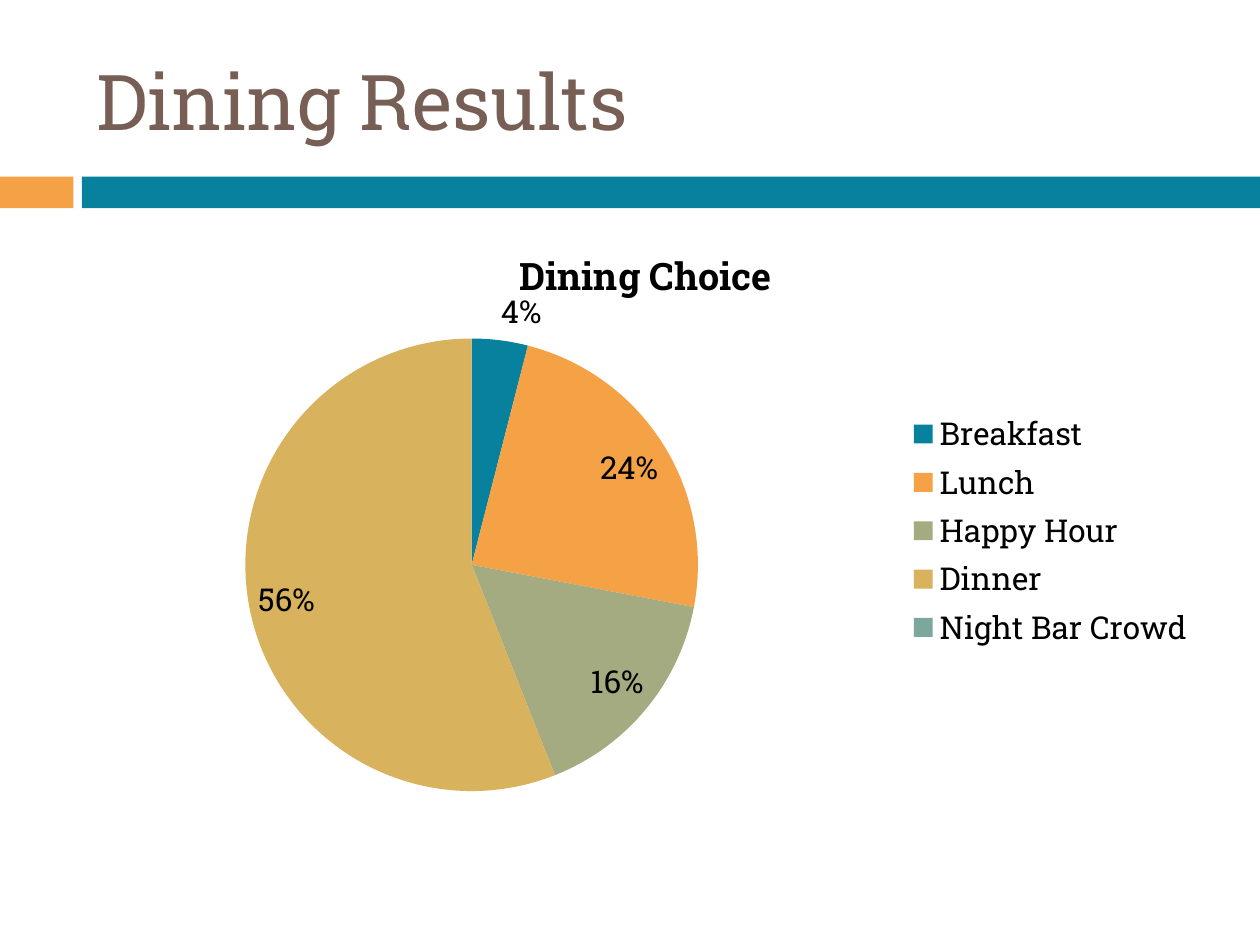
from lxml import etree
from pptx import Presentation
from pptx.chart.data import CategoryChartData
from pptx.dml.color import RGBColor
from pptx.enum.chart import XL_CHART_TYPE, XL_LABEL_POSITION, XL_LEGEND_POSITION
from pptx.enum.shapes import MSO_SHAPE
from pptx.enum.text import MSO_ANCHOR
from pptx.oxml import parse_xml
from pptx.oxml.ns import nsdecls, qn
from pptx.util import Cm, Pt

PIE = XL_CHART_TYPE.PIE
BEST_FIT = XL_LABEL_POSITION.BEST_FIT
RIGHT = XL_LEGEND_POSITION.RIGHT
RECTANGLE = MSO_SHAPE.RECTANGLE
MIDDLE = MSO_ANCHOR.MIDDLE

FONT = "Roboto Slab"
TEAL, ORANGE = "08819E", "F5A246"


def color(value):
    return RGBColor.from_string(value)


def style(font, size, value, bold=False):
    font.name = FONT
    font.size = Pt(size)
    font.bold = bold
    font.color.rgb = color(value)


deck = Presentation()
deck.slide_width, deck.slide_height = Cm(25.4), Cm(19.05)
page = deck.slides.add_slide(deck.slide_layouts[6])

# Divider band
for left, width, fill in [(0, 1.48, ORANGE), (1.65, 23.75, TEAL)]:
    band = page.shapes.add_shape(RECTANGLE, Cm(left), Cm(3.56), Cm(width), Cm(0.64))
    band.shadow.inherit = False
    band.fill.solid()
    band.fill.fore_color.rgb = color(fill)
    band.line.fill.background()

# Title
title_box = page.shapes.add_textbox(Cm(1.69), Cm(0.64), Cm(22.66), Cm(2.75))
frame = title_box.text_frame
frame.word_wrap = True
frame.vertical_anchor = MIDDLE
frame.text = "Dining Results"
style(frame.paragraphs[0].runs[0].font, 44, "775F55")

# Pie chart
data = CategoryChartData(number_format="0%")
data.categories = ["Breakfast", "Lunch", "Happy Hour", "Dinner", "Night Bar Crowd"]
data.add_series("Dining Choice", [0.04, 0.24, 0.16, 0.56, 0])
chart = page.shapes.add_chart(PIE, Cm(1.69), Cm(4.45), Cm(22.66), Cm(12.5), data).chart
style(chart.font, 18, "000000")

chart.has_title = True
heading = chart.chart_title.text_frame
heading.text = "Dining Choice"
style(heading.paragraphs[0].runs[0].font, 21.6, "000000", bold=True)

chart.has_legend = True
chart.legend.position = RIGHT
chart.legend.include_in_layout = False
style(chart.legend.font, 18, "000000")

# Slices
pie = chart.plots[0]
pie.vary_by_categories = True
series = pie.series[0]
for index, fill in enumerate([TEAL, ORANGE, "A5AB81", "D8B25C", "7BA79D"]):
    slice_fill = series.points[index].format.fill
    slice_fill.solid()
    slice_fill.fore_color.rgb = color(fill)

# Value labels, none on the empty last slice
labels = series.data_labels
labels.show_value = True
labels.show_percentage = False
labels.number_format = "0%"
labels.number_format_is_linked = False
labels.position = BEST_FIT
style(labels.font, 18, "000000")
hidden_label = parse_xml(
    f'<c:dLbl {nsdecls("c")}><c:idx val="4"/><c:delete val="1"/></c:dLbl>')
series.data_labels._element.insert(0, hidden_label)

# Inner plot area as fractions of the chart
plot_area = chart._chartSpace.chart.plotArea
for old_layout in plot_area.findall(qn("c:layout")):
    plot_area.remove(old_layout)
layout = etree.Element(qn("c:layout"))
manual = etree.SubElement(layout, qn("c:manualLayout"))
for tag, value in [("layoutTarget", "inner"), ("xMode", "edge"), ("yMode", "edge"),
                   ("x", "0.06"), ("y", "0.19"), ("w", "0.57"), ("h", "0.73")]:
    etree.SubElement(manual, qn(f"c:{tag}")).set("val", value)
plot_area.insert(0, layout)

deck.save("out.pptx")
